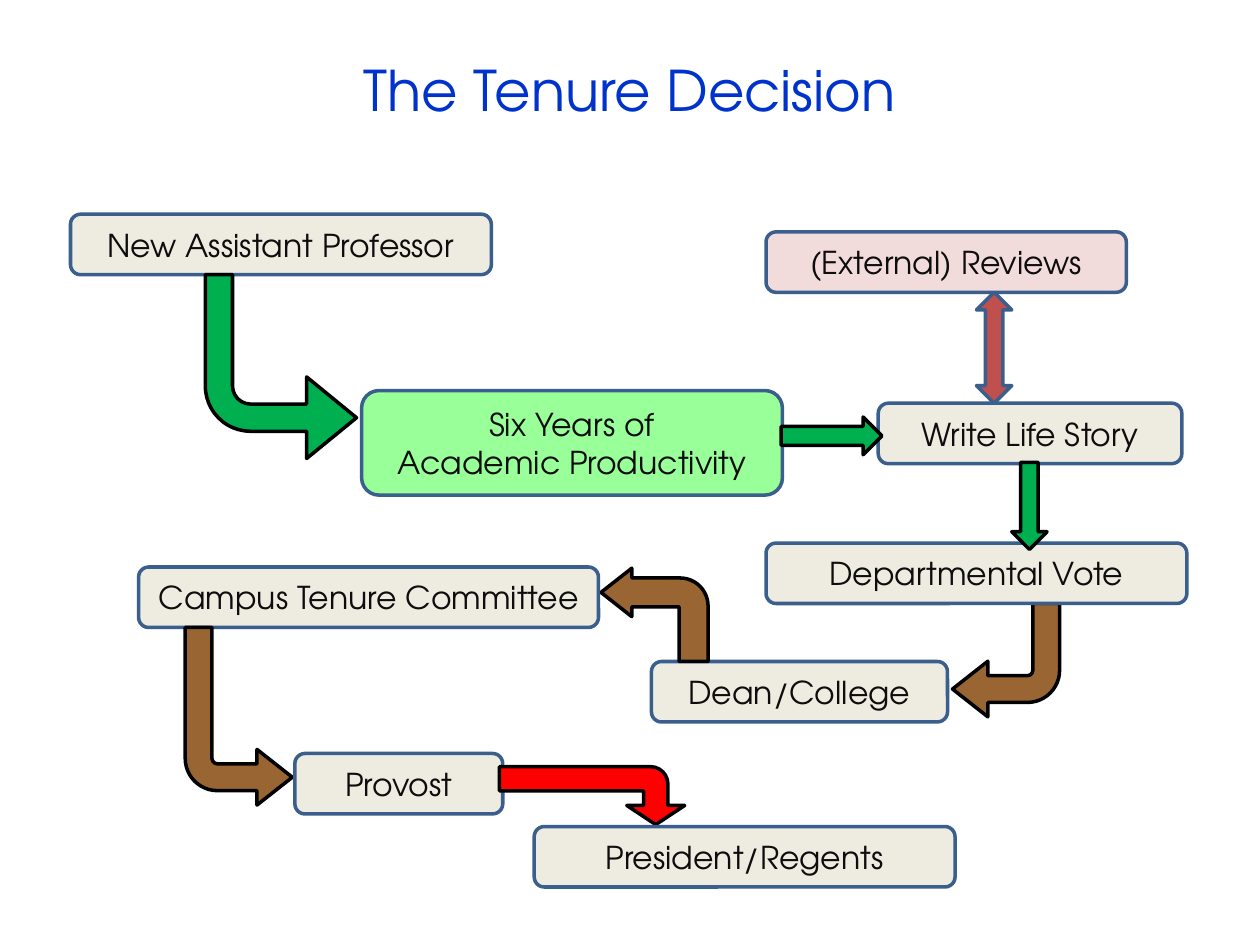
"""Build the tenure decision flowchart slide."""
from pptx import Presentation
from pptx.dml.color import RGBColor
from pptx.enum.shapes import MSO_SHAPE as Preset
from pptx.enum.text import MSO_ANCHOR as Anchor, PP_ALIGN as Align
from pptx.util import Inches, Pt

FONT = "TeX Gyre Adventor"
BEIGE, MINT, PINK = "EEECE1", "99FF99", "F2DCDB"
GREEN, BROWN, RED, ROSE = "00B050", "996633", "FF0000", "C0504D"
BLUE, BLACK = "3A5F8C", "000000"
BOX, BENT = Preset.ROUNDED_RECTANGLE, Preset.BENT_ARROW
BOX_ROWS = 4.8

presentation = Presentation()
presentation.slide_width, presentation.slide_height = Inches(10), Inches(7.5)
slide = presentation.slides.add_slide(presentation.slide_layouts[6])
column = presentation.slide_width / 100
row = presentation.slide_height / 75


def color(hex_value):
    return RGBColor.from_string(hex_value)


def write(shape, text, size, hex_value):
    frame = shape.text_frame
    frame.word_wrap = True
    frame.vertical_anchor = Anchor.MIDDLE
    paragraph = frame.paragraphs[0]
    paragraph.text = text
    paragraph.alignment = Align.CENTER
    paragraph.font.name = FONT
    paragraph.font.size = Pt(size)
    paragraph.font.color.rgb = color(hex_value)


title = slide.shapes.add_textbox(*map(int, (5 * column, 3 * row, 90 * column, 8.2 * row)))
write(title, "The Tenure Decision", 32, "0033CC")

steps = [
    (BOX, 5.6, 17, 33.4, BOX_ROWS, BEIGE, BLUE, "New Assistant Professor"),
    (BOX, 28.7, 31, 33.4, 8.3, MINT, BLUE, "Six Years of\nAcademic Productivity"),
    (BENT, 16.3, 21.8, 12, 14.6, GREEN, BLACK, ("V", 0, 0.18, 0.27)),
    (BENT, 75.6, 47.9, 8.5, 9, BROWN, BLACK, ("HV", 0, 0.25, 0.26)),
    (BOX, 51.7, 52.5, 23.5, BOX_ROWS, BEIGE, BLUE, "Dean/College"),
    (BENT, 47.7, 45.1, 8.5, 7.4, BROWN, BLACK, ("H", 0, 0.31, 0.26)),
    (BOX, 11, 45, 36.5, BOX_ROWS, BEIGE, BLUE, "Campus Tenure Committee"),
    (BENT, 14.7, 49.8, 8.5, 14.1, BROWN, BLACK, ("V", 0, 0.25, 0.26)),
    (BOX, 23.4, 59.8, 16.5, BOX_ROWS, BEIGE, BLUE, "Provost"),
    (BENT, 44.7, 55.8, 4.6, 14.7, RED, BLACK, ("HV", 270, 0.42, 0.5)),
    (BOX, 42.4, 65.6, 33.4, BOX_ROWS, BEIGE, BLUE, "President/Regents"),
    (BOX, 69.7, 32, 24.1, BOX_ROWS, BEIGE, BLUE, "Write Life Story"),
    (Preset.RIGHT_ARROW, 62, 33.1, 8, 3, GREEN, BLACK, None),
    (BOX, 60.8, 43.1, 33.4, BOX_ROWS, BEIGE, BLUE, "Departmental Vote"),
    (Preset.DOWN_ARROW, 80.3, 36.7, 2.8, 6.9, GREEN, BLACK, None),
    (BOX, 60.8, 18.4, 28.6, BOX_ROWS, PINK, BLUE, "(External) Reviews"),
    (Preset.UP_DOWN_ARROW, 77.5, 23.2, 2.8, 8.8, ROSE, BLUE, None),
]
for preset, left, top, width, height, fill, line, detail in steps:
    shape = slide.shapes.add_shape(
        preset, *map(int, (left * column, top * row, width * column, height * row)))
    shape.shadow.inherit = False
    shape.fill.solid()
    shape.fill.fore_color.rgb = color(fill)
    shape.line.color.rgb = color(line)
    shape.line.width = Pt(2)
    if preset == BOX:
        write(shape, detail, 18, "0D0D0D")
    elif preset == BENT:
        flips, shape.rotation, shaft, head = detail
        for axis in flips:
            shape._element.spPr.xfrm.set(f"flip{axis}", "1")
        for index, share in enumerate((shaft, head, 0.33, 0.3)):
            shape.adjustments[index] = share

presentation.save("out.pptx")
